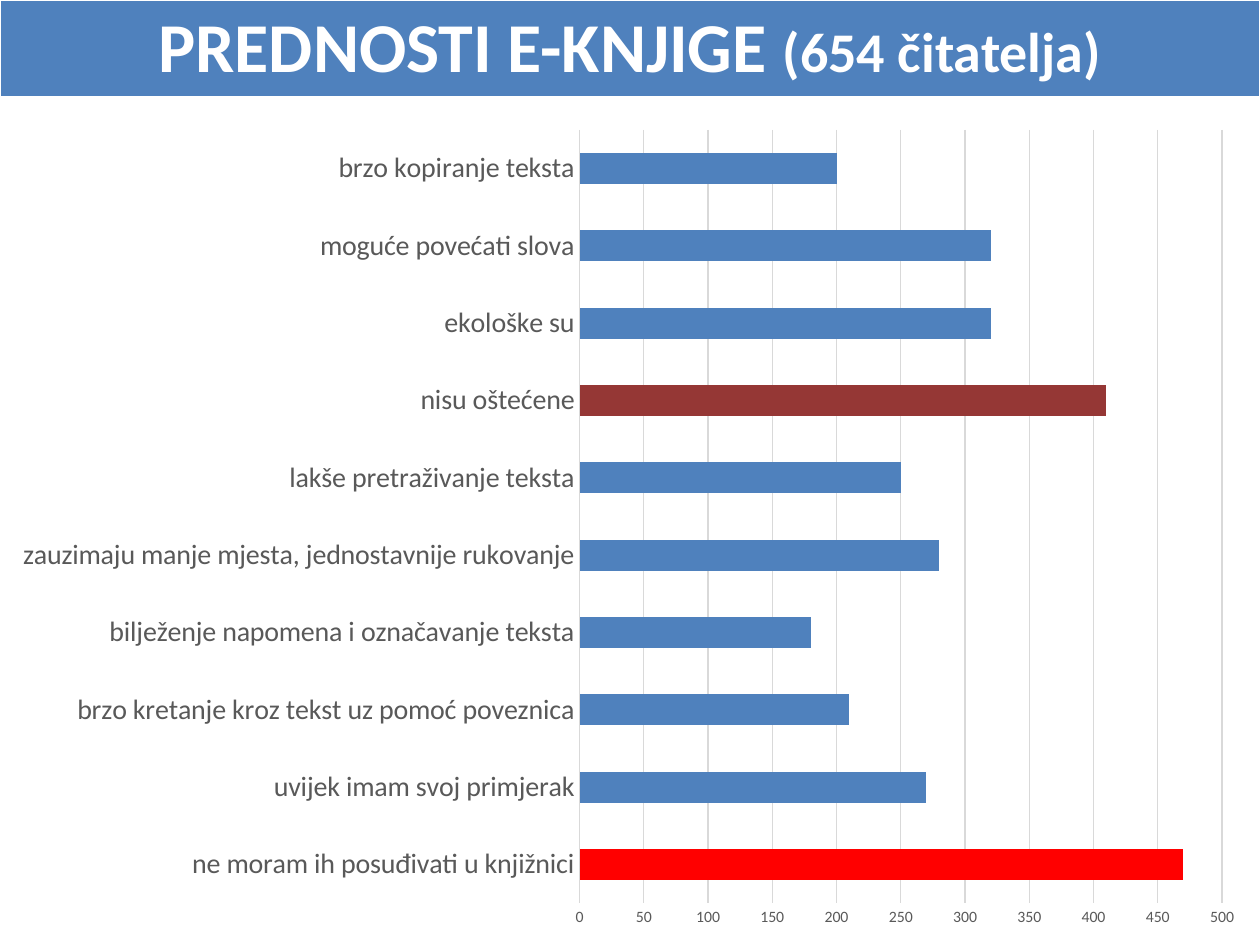
from pptx import Presentation
from pptx.chart.data import CategoryChartData
from pptx.dml.color import RGBColor
from pptx.enum.chart import XL_CHART_TYPE as ChartType, XL_TICK_MARK as Tick
from pptx.enum.text import MSO_ANCHOR as Anchor, PP_ALIGN as Align
from pptx.oxml import parse_xml
from pptx.oxml.ns import nsdecls
from pptx.util import Inches, Pt

ADVANTAGES = {
    "ne moram ih posuđivati u knjižnici": 470,
    "uvijek imam svoj primjerak": 270,
    "brzo kretanje kroz tekst uz pomoć poveznica": 210,
    "bilježenje napomena i označavanje teksta": 180,
    "zauzimaju manje mjesta, jednostavnije rukovanje": 280,
    "lakše pretraživanje teksta": 250,
    "nisu oštećene": 410,
    "ekološke su": 320,
    "moguće povećati slova": 320,
    "brzo kopiranje teksta": 200,
}
HIGHLIGHTS = {
    "ne moram ih posuđivati u knjižnici": "FF0000",
    "nisu oštećene": "953735",
}


def rgb(value):
    return RGBColor.from_string(value)


def paint(fill, color):
    fill.solid()
    fill.fore_color.rgb = rgb(color)


def style_font(font, size, color, bold=False, name="Calibri"):
    font.name, font.size, font.bold = name, Pt(size), bold
    font.color.rgb = rgb(color)


def add_text(paragraph, text, **style):
    run = paragraph.add_run()
    run.text = text
    style_font(run.font, **style)


class SlideBuilder:
    BLUE, WHITE, GREY, GRID = "4F81BD", "FFFFFF", "595959", "D9D9D9"

    def __init__(self, width, height):
        self.deck = Presentation()
        self.deck.slide_width = Inches(width)
        self.deck.slide_height = Inches(height)
        self.slide = self.deck.slides.add_slide(self.deck.slide_layouts[6])

    def box(self, left, top, width, height):
        """Turn shares of the slide's size into lengths."""
        across, down = self.deck.slide_width, self.deck.slide_height
        return (int(left * across), int(top * down),
                int(width * across), int(height * down))

    def banner(self, parts, bottom):
        """Full-width one-cell table holding (text, size) parts."""
        table = self.slide.shapes.add_table(1, 1, *self.box(0, 0, 1, bottom)).table
        cell = table.cell(0, 0)
        properties = cell._tc.get_or_add_tcPr()
        for side, points in zip("LRTB", (1, 1, 1, 3)):
            properties.append(parse_xml(
                f'<a:ln{side} {nsdecls("a")} w="{Pt(points)}"><a:solidFill>'
                f'<a:srgbClr val="{self.WHITE}"/></a:solidFill></a:ln{side}>'))
        paint(cell.fill, self.BLUE)
        cell.vertical_anchor = Anchor.MIDDLE
        heading = cell.text_frame.paragraphs[0]
        heading.alignment = Align.CENTER
        for text, size in parts:
            add_text(heading, text, size=size, color=self.WHITE, bold=True)

    def bar_chart(self, values, highlights, area, plot):
        data = CategoryChartData()
        data.categories = list(values)
        data.add_series("Series 1", list(values.values()))
        chart = self.slide.shapes.add_chart(
            ChartType.BAR_CLUSTERED, *self.box(*area), data).chart
        chart.has_legend = chart.has_title = False
        style_font(chart.font, 10, "000000")

        bars = chart.plots[0]
        bars.gap_width, bars.vary_by_categories = 150, False
        series = bars.series[0]
        series.invert_if_negative = False
        paint(series.format.fill, self.BLUE)
        for index, category in enumerate(values):
            if category in highlights:
                paint(series.points[index].format.fill, highlights[category])

        self.style_axis(chart.category_axis, 16)
        scale = chart.value_axis
        self.style_axis(scale, 9)
        scale.minimum_scale, scale.maximum_scale, scale.major_unit = 0, 500, 50
        scale.has_major_gridlines = True
        grid = scale.major_gridlines.format.line
        grid.color.rgb, grid.width = rgb(self.GRID), Pt(0.75)
        self.place_plot(chart, plot)

    def style_axis(self, axis, size):
        axis.major_tick_mark = axis.minor_tick_mark = Tick.NONE
        axis.format.line.fill.background()
        style_font(axis.tick_labels.font, size, self.GREY)

    def place_plot(self, chart, plot):
        """Fix the inner plot area, in shares of the chart."""
        plot_area = chart.element.xpath("c:chart/c:plotArea")[0]
        for layout in plot_area.xpath("c:layout"):
            plot_area.remove(layout)
        shares = "".join(f'<c:{key} val="{share}"/>' for key, share in zip("xywh", plot))
        plot_area.insert(0, parse_xml(
            f'<c:layout {nsdecls("c")}><c:manualLayout><c:layoutTarget val="inner"/>'
            f'<c:xMode val="edge"/><c:yMode val="edge"/>{shares}'
            f'</c:manualLayout></c:layout>'))


def main():
    builder = SlideBuilder(10, 7.5)
    builder.banner([("PREDNOSTI E-KNJIGE ", 40), ("(654 čitatelja)", 32)], bottom=0.1)
    builder.bar_chart(ADVANTAGES, HIGHLIGHTS,
                      area=(0, 0.12, 1, 0.88), plot=(0.46, 0.02, 0.51, 0.93))
    builder.deck.save("out.pptx")


if __name__ == "__main__":
    main()
